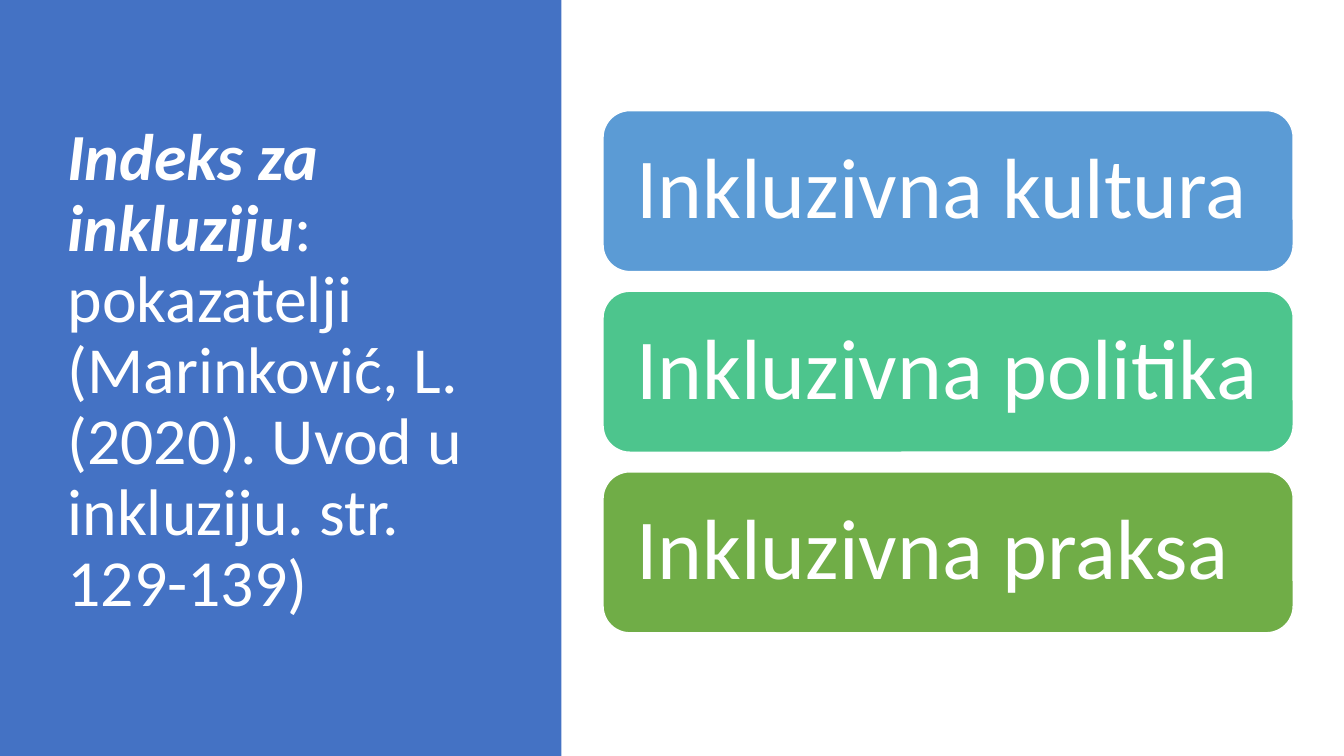
from dataclasses import dataclass

from pptx import Presentation
from pptx.dml.color import RGBColor
from pptx.enum.shapes import MSO_SHAPE
from pptx.enum.text import MSO_ANCHOR, MSO_AUTO_SIZE, PP_ALIGN
from pptx.util import Pt


@dataclass(frozen=True)
class Theme:
    font: str = "Calibri"
    white: str = "FFFFFF"
    panel: str = "4472C4"
    cards: tuple = ("5B9BD5", "4DC58D", "70AD47")
    title_size: float = 47
    card_size: float = 61
    line_spacing: float = 0.9


THEME = Theme()


def add_block(s, kind, box, color):
    sp = s.shapes.add_shape(kind, *map(Pt, box))
    sp.shadow.inherit = False
    sp.fill.solid()
    sp.fill.fore_color.rgb = RGBColor.from_string(color)
    sp.line.fill.background()
    return sp


def format_frame(tf):
    tf.word_wrap = True
    tf.auto_size = MSO_AUTO_SIZE.NONE
    tf.vertical_anchor = MSO_ANCHOR.MIDDLE
    p = tf.paragraphs[0]
    p.alignment = PP_ALIGN.LEFT
    p.line_spacing = THEME.line_spacing
    return p


def add_run(p, text, size, emphasis=False):
    r = p.add_run()
    r.text = text
    r.font.name = THEME.font
    r.font.size = Pt(size)
    r.font.bold = r.font.italic = emphasis
    r.font.color.rgb = RGBColor.from_string(THEME.white)


def title_panel(s, box):
    left, top, width, height = box
    panel = add_block(s, MSO_SHAPE.RECTANGLE, box, THEME.panel)
    title = s.shapes.title
    panel._element.addnext(title._element)
    title.left, title.top = Pt(left + 41), Pt(top + 49)
    title.width, title.height = Pt(width - 101.5), Pt(height - 106.5)
    p = format_frame(title.text_frame)
    add_run(p, "Indeks za inkluziju", THEME.title_size, emphasis=True)
    add_run(p, ": pokazatelji", THEME.title_size)
    p.add_line_break()
    add_run(p, "(Marinković, L. (2020). Uvod u inkluziju. str. 129-139)", THEME.title_size)


def card_stack(s, box, labels, gap):
    left, top, width, height = box
    card_height = (height - gap * (len(labels) - 1)) / len(labels)
    for i, (label, color) in enumerate(zip(labels, THEME.cards)):
        card_top = top + i * (card_height + gap)
        card = add_block(s, MSO_SHAPE.ROUNDED_RECTANGLE,
                         (left, card_top, width, card_height), color)
        card.line.color.rgb = RGBColor.from_string(THEME.white)
        card.line.width = Pt(1)
        tf = card.text_frame
        tf.margin_left, tf.margin_right = Pt(18), Pt(10)
        tf.margin_top = tf.margin_bottom = Pt(0)
        add_run(format_frame(tf), label, THEME.card_size)


def main():
    prs = Presentation()
    prs.slide_width, prs.slide_height = Pt(960), Pt(540)
    s = prs.slides.add_slide(prs.slide_layouts[5])
    title_panel(s, (0, 0, 401, 540))
    card_stack(s, (430.75, 79, 493, 373),
               ("Inkluzivna kultura", "Inkluzivna politika", "Inkluzivna praksa"), gap=14)
    prs.save("out.pptx")


if __name__ == "__main__":
    main()
